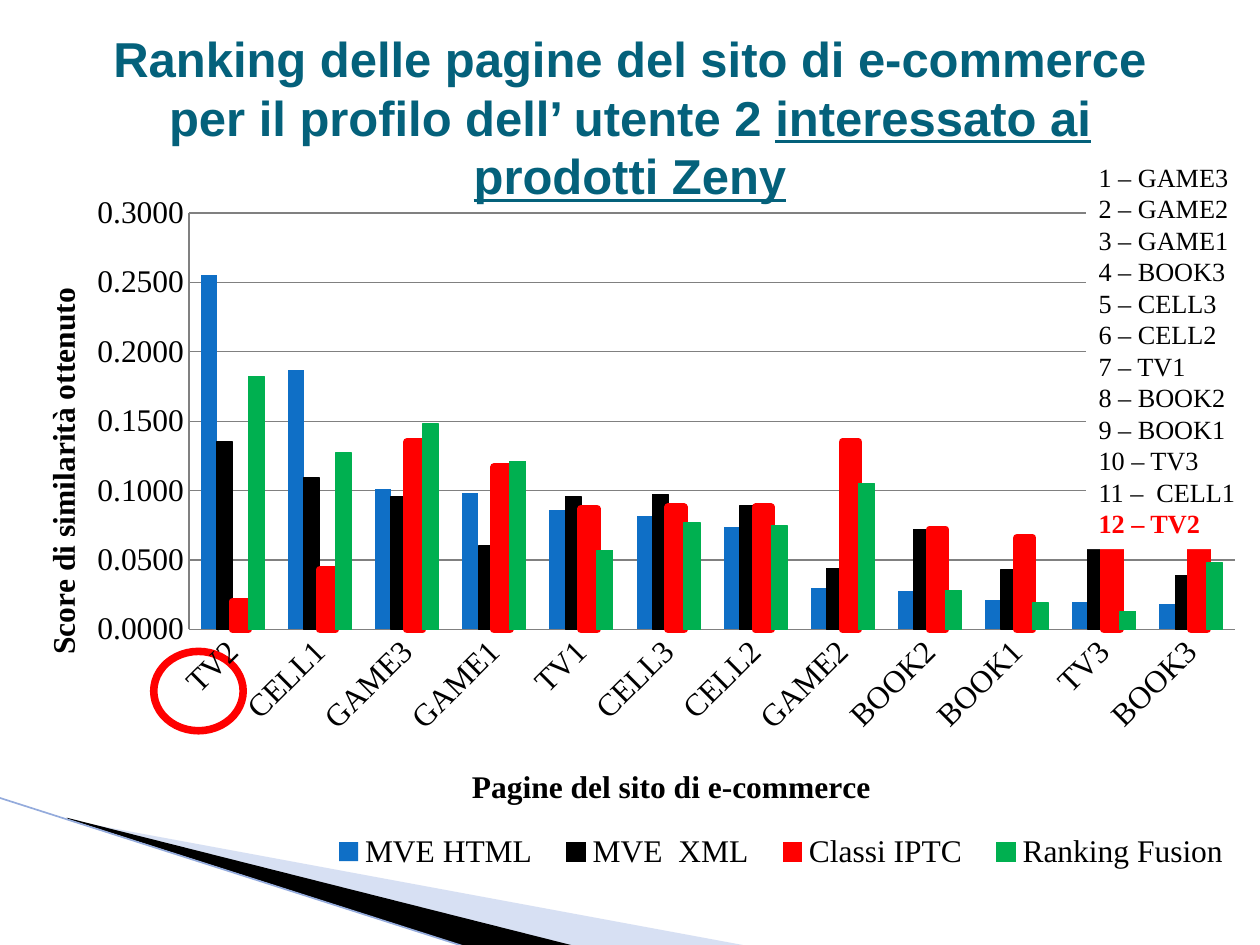
from pptx import Presentation
from pptx.chart.data import CategoryChartData
from pptx.dml.color import RGBColor
from pptx.enum.chart import XL_CHART_TYPE as CT, XL_LEGEND_POSITION as LP, XL_TICK_MARK as TM
from pptx.enum.shapes import MSO_CONNECTOR, MSO_SHAPE
from pptx.enum.text import MSO_ANCHOR, PP_ALIGN
from pptx.oxml import parse_xml
from pptx.oxml.ns import nsdecls, qn
from pptx.util import Inches, Pt
from lxml import etree

BLACK = RGBColor(0, 0, 0)
WHITE = RGBColor(255, 255, 255)
RED = RGBColor(255, 0, 0)
GREEN = RGBColor(0, 0xB0, 0x50)
BLUE = RGBColor(0x0F, 0x6F, 0xC6)
TEAL = RGBColor(0x04, 0x61, 0x7B)
PALE = RGBColor(0x9D, 0xB2, 0xE1)
EDGE = RGBColor(0x94, 0xAB, 0xDC)
GRAY = RGBColor(0x80, 0x80, 0x80)
SERIF = "Times New Roman"


def set_layout(el, index, inner=False, **place):
    """Place a chart part at fractions of the chart's size."""
    for old in el.findall(qn("c:layout")):
        el.remove(old)
    parts = '<c:layoutTarget val="inner"/>' if inner else ""
    parts += '<c:xMode val="edge"/><c:yMode val="edge"/>'
    parts += "".join(f'<c:{k} val="{v}"/>' for k, v in place.items())
    el.insert(index, parse_xml(
        f'<c:layout {nsdecls("c")}><c:manualLayout>{parts}</c:manualLayout></c:layout>'))


prs = Presentation()
prs.slide_width, prs.slide_height = Inches(10), Inches(7.5)
s = prs.slides.add_slide(prs.slide_layouts[5])

# Corner swoosh
swoosh = [
    (PALE, [(0.55, 6.51), (5.95, 7.51), (4.56, 7.51), (0.55, 6.5)]),
    (BLACK, [(0.53, 6.49), (4.57, 7.51), (3.72, 7.52), (0.54, 6.5)]),
]
for color, points in swoosh:
    points = [(Inches(x), Inches(y)) for x, y in points]
    fb = s.shapes.build_freeform(*points[0])
    fb.add_line_segments(points[1:])
    sp = fb.convert_to_shape()
    sp.shadow.inherit = False
    sp.fill.solid()
    sp.fill.fore_color.rgb = color
    sp.line.fill.background()
    if color == PALE:
        clr = sp._element.spPr.find(qn("a:solidFill")).find(qn("a:srgbClr"))
        etree.SubElement(clr, qn("a:alpha"), val="40000")

edge = s.shapes.add_connector(MSO_CONNECTOR.STRAIGHT, Inches(-0.01), Inches(6.33),
                              Inches(3.71), Inches(7.52))
edge.line.color.rgb = EDGE
edge.line.width = Pt(0.95)
etree.SubElement(edge._element.spPr, qn("a:effectLst"))

# Ring around the first category label
ring = s.shapes.add_shape(MSO_SHAPE.OVAL, Inches(1.22), Inches(5.17), Inches(0.71), Inches(0.63))
ring.shadow.inherit = False
ring.fill.solid()
ring.fill.fore_color.rgb = WHITE
ring.line.color.rgb = RED
ring.line.width = Pt(4.33)

# Title
title = s.shapes.title
title.left, title.top, title.width, title.height = Inches(0.5), Inches(0.3), Inches(9), Inches(1.25)
tf = title.text_frame
tf.vertical_anchor = MSO_ANCHOR.MIDDLE
p = tf.paragraphs[0]
p.alignment = PP_ALIGN.CENTER
for text, underlined in [
    ("Ranking delle pagine del sito di e-commerce per il profilo dell’ utente 2 ", False),
    ("interessato ai prodotti Zeny", True),
]:
    r = p.add_run()
    r.text = text
    r.font.name, r.font.size, r.font.bold = "Arial", Pt(28), True
    r.font.color.rgb = TEAL
    if underlined:
        r.font.underline = True

# Chart
data = CategoryChartData(number_format="0.0000")
data.categories = ["TV2", "CELL1", "GAME3", "GAME1", "TV1", "CELL3",
                   "CELL2", "GAME2", "BOOK2", "BOOK1", "TV3", "BOOK3"]
series = [
    ("MVE HTML", BLUE, None,
     [0.255, 0.187, 0.101, 0.098, 0.086, 0.082, 0.074, 0.03, 0.028, 0.021, 0.02, 0.018]),
    ("MVE  XML", BLACK, 0.75,
     [0.135, 0.109, 0.096, 0.06, 0.096, 0.097, 0.089, 0.044, 0.072, 0.043, 0.12, 0.039]),
    ("Classi IPTC", RED, 4.33,
     [0.02, 0.043, 0.135, 0.117, 0.087, 0.088, 0.088, 0.135, 0.072, 0.066, 0.062, 0.089]),
    ("Ranking Fusion", GREEN, 0.75,
     [0.182, 0.127, 0.148, 0.121, 0.057, 0.077, 0.075, 0.105, 0.028, 0.019, 0.013, 0.048]),
]
for name, _, _, values in series:
    data.add_series(name, values)
chart = s.shapes.add_chart(CT.COLUMN_CLUSTERED, Inches(0), Inches(1.47),
                           Inches(10), Inches(5.51), data).chart
chart.has_title = False
chart.font.name, chart.font.size = SERIF, Pt(18)
chart.font.color.rgb = BLACK

plot = chart.plots[0]
plot.vary_by_categories = False
plot.gap_width, plot.overlap = 150, 0
for ser, (_, color, width, _) in zip(plot.series, series):
    ser.format.fill.solid()
    ser.format.fill.fore_color.rgb = color
    if width:
        ser.format.line.color.rgb = color
        ser.format.line.width = Pt(width)
set_layout(plot._element.getparent(), 0, inner=True, x=0.15, y=0.04, w=0.83, h=0.6)

# Axes
cat_axis, val_axis = chart.category_axis, chart.value_axis
for axis, text, turn, x, y in [
    (cat_axis, "Pagine del sito di e-commerce", 0, 0.37, 0.83),
    (val_axis, "Score di similarità ottenuto", -90, 0.03, 0.14),
]:
    axis.major_tick_mark = axis.minor_tick_mark = TM.NONE
    axis.format.line.color.rgb = GRAY
    axis.tick_labels.font.size = Pt(18)
    tf = axis.axis_title.text_frame
    tf.text = text
    tf._txBody.find(qn("a:bodyPr")).set("rot", str(turn * 60000))
    font = tf.paragraphs[0].runs[0].font
    font.name, font.size, font.bold = SERIF, Pt(18), True
    font.color.rgb = BLACK
    set_layout(axis.axis_title._element, 1, x=x, y=y)
cat_axis._element.find(qn("c:txPr")).find(qn("a:bodyPr")).set("rot", "-2700000")
val_axis.minimum_scale, val_axis.maximum_scale, val_axis.major_unit = 0, 0.3, 0.05
val_axis.tick_labels.number_format = "0.0000"
val_axis.tick_labels.number_format_is_linked = False
val_axis.major_gridlines.format.line.color.rgb = GRAY

# Legend
chart.has_legend = True
chart.legend.position = LP.BOTTOM
chart.legend.include_in_layout = False
set_layout(chart.legend._element, 1, x=0.25, y=0.93, w=0.74, h=0.06)

# Ranking list
box = s.shapes.add_shape(MSO_SHAPE.RECTANGLE, Inches(8.62), Inches(1.23), Inches(1.38), Inches(3.13))
box.shadow.inherit = False
box.fill.solid()
box.fill.fore_color.rgb = WHITE
box.line.fill.background()
tf = box.text_frame
tf.word_wrap = False
tf.vertical_anchor = MSO_ANCHOR.TOP
pages = ["GAME3", "GAME2", "GAME1", "BOOK3", "CELL3", "CELL2",
         "TV1", "BOOK2", "BOOK1", "TV3", " CELL1", "TV2"]
tf.text = "\n".join(f"{rank} – {page}" for rank, page in enumerate(pages, 1))
for p in tf.paragraphs:
    p.alignment = PP_ALIGN.LEFT
    p.font.name, p.font.size = SERIF, Pt(15)
    p.font.color.rgb = BLACK
last = tf.paragraphs[-1].font
last.bold = True
last.color.rgb = RED

prs.save("out.pptx")
